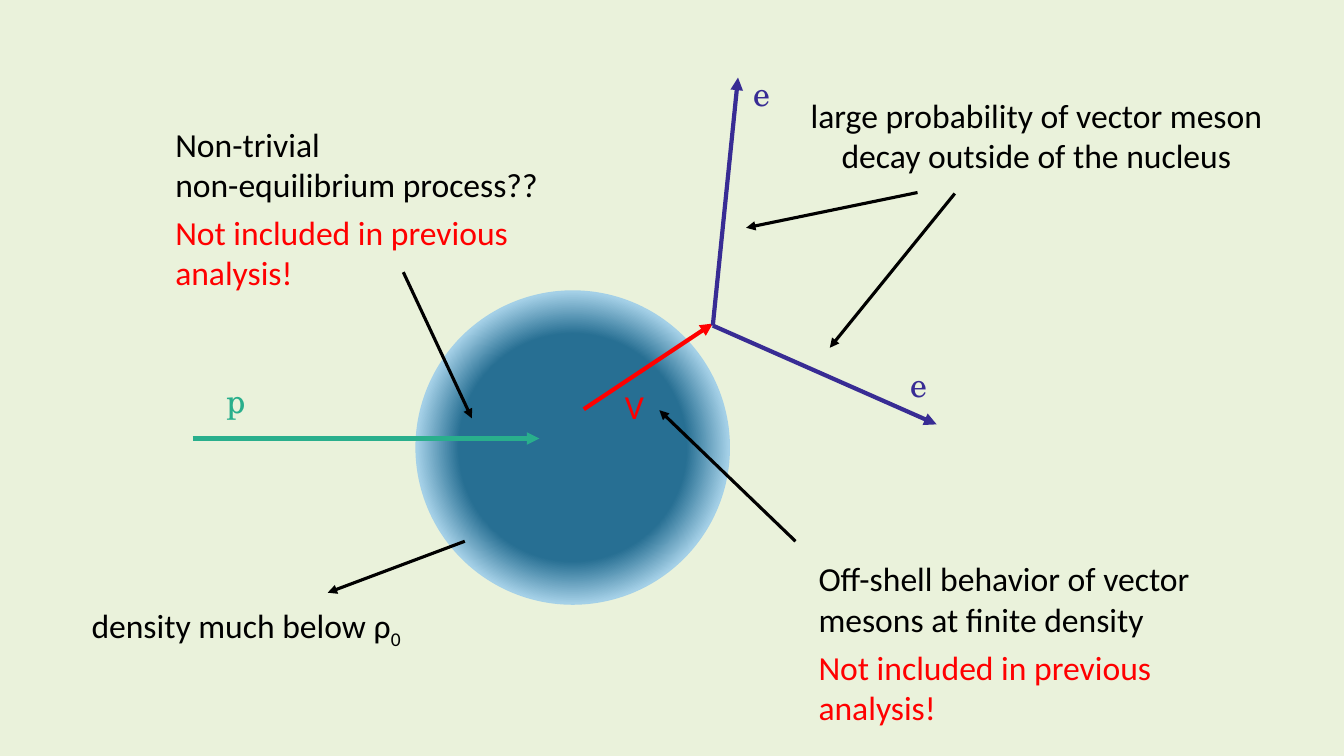
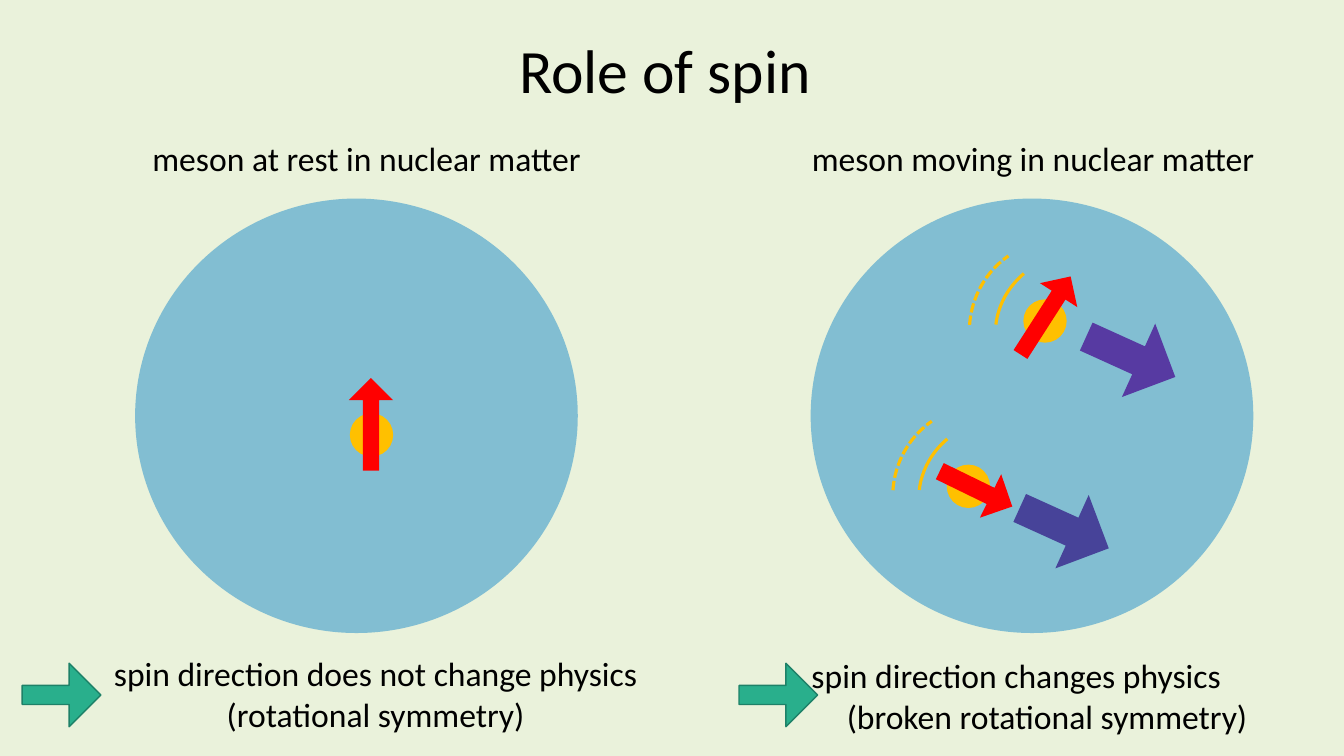
from lxml import etree
from pptx import Presentation
from pptx.dml.color import RGBColor
from pptx.enum.dml import MSO_LINE
from pptx.enum.shapes import MSO_CONNECTOR, MSO_SHAPE
from pptx.enum.text import MSO_ANCHOR, PP_ALIGN
from pptx.oxml.ns import qn
from pptx.util import Pt

PX = 9144
LEFT, MID = PP_ALIGN.LEFT, PP_ALIGN.CENTER
TOP = MSO_ANCHOR.TOP
OVAL, ARC = MSO_SHAPE.OVAL, MSO_SHAPE.ARC
UP, RIGHT = MSO_SHAPE.UP_ARROW, MSO_SHAPE.RIGHT_ARROW
LINE = MSO_CONNECTOR.STRAIGHT
DASH = MSO_LINE.SQUARE_DOT
SANS, SERIF = "Calibri", "TeX Gyre Schola"
WARN = "Not included in previous analysis!"
HUE = {
    "back": "EAF2DB", "ink": "000000", "red": "FF0000", "green": "29AF8C",
    "edge": "1E8168", "blue": "382C94", "core": "276F93", "rim": "A4D0E7",
    "matter": "3D9CCC", "gold": "FFC000", "plum": "573AA2", "slate": "474399",
}


def rgb(name):
    """Return the named colour."""
    return RGBColor.from_string(HUE[name])


def px(*vals):
    """Turn px lengths into EMU."""
    return [round(val * PX) for val in vals]


def write(frame, text, size=24, hue="ink", font=SANS, align=LEFT, sub="", inset=0):
    """Fill a text frame, with an optional subscript and second-line inset."""
    frame.word_wrap = True
    frame.vertical_anchor = TOP
    frame.text = text
    for rank, para in enumerate(frame.paragraphs):
        para.alignment = align
        if rank and inset:
            para._p.get_or_add_pPr().set("marL", str(inset * PX))
    if sub:
        run = para.add_run()
        run.text = sub
        run.font._element.set("baseline", "-25000")
    for para in frame.paragraphs:
        for run in para.runs:
            run.font.size = Pt(size)
            run.font.name = font
            run.font.color.rgb = rgb(hue)


def label(slide, x, y, w, h, text, **form):
    """Add a text box."""
    write(slide.shapes.add_textbox(*px(x, y, w, h)).text_frame, text, **form)


def shape(slide, kind, x, y, w, h, fill=None, line=None, wide=1, turn=0, adj=()):
    """Add a preset shape and return it."""
    item = slide.shapes.add_shape(kind, *px(x, y, w, h))
    item.shadow.inherit = False
    item.rotation = turn
    for rank, val in enumerate(adj):
        item.adjustments[rank] = val
    if fill:
        item.fill.solid()
        item.fill.fore_color.rgb = rgb(fill)
    else:
        item.fill.background()
    if line:
        item.line.color.rgb = rgb(line)
        item.line.width = Pt(wide)
    else:
        item.line.fill.background()
    return item


def arrow(slide, x1, y1, x2, y2, hue="ink", wide=2.25):
    """Add a straight line with a head at its end."""
    item = slide.shapes.add_connector(LINE, *px(x1, y1, x2, y2))
    item.line.color.rgb = rgb(hue)
    item.line.width = Pt(wide)
    props = item._element.spPr
    etree.SubElement(props.find(qn("a:ln")), qn("a:tailEnd"), type="triangle")
    etree.SubElement(props, qn("a:effectLst"))


def glow(item):
    """Fill a shape from core to rim with a round gradient."""
    item.fill.gradient()
    for stop, pos, hue in zip(item.fill.gradient_stops, (0.51, 0.7), ("core", "rim")):
        stop.position = pos
        stop.color.rgb = rgb(hue)
    grad = item._element.spPr.find(qn("a:gradFill"))
    grad.remove(grad.find(qn("a:lin")))
    ring = etree.SubElement(grad, qn("a:path"), {"path": "circle"})
    sides = {side: "50000" for side in "ltrb"}
    etree.SubElement(ring, qn("a:fillToRect"), sides)


def decay(slide, x, y):
    """Draw the nucleus with the proton, meson and electron tracks."""
    glow(shape(slide, OVAL, x + 221, y + 221, 312, 312))
    for x1, y1, x2, y2, hue in (
        (0, 368, 344, 368, "green"),
        (388, 339, 516, 254, "red"),
        (516, 256, 541, 10, "blue"),
        (516, 256, 738, 354, "blue"),
    ):
        arrow(slide, x + x1, y + y1, x + x2, y + y2, hue, 3)
    for dx, dy, text, hue, font in (
        (24, 305, "p", "green", SERIF),
        (702, 289, "e", "blue", SERIF),
        (547, 0, "e", "blue", SERIF),
        (419, 311, "V", "red", SANS),
    ):
        label(slide, x + dx, y + dy, 50, 50, text, hue=hue, font=font)


def note(slide, x, y, w, text, rays, warn=0, **form):
    """Place a remark with its arrows and an optional warning below."""
    label(slide, x, y, w, 91, text, **form)
    if warn:
        label(slide, x, y + warn, 406, 91, WARN, hue="red")
    for x1, y1, x2, y2 in rays:
        arrow(slide, x + x1, y + y1, x + x2, y + y2)


def panel(slide, x, y, shift, head):
    """Draw a disc of nuclear matter under its heading."""
    label(slide, x + shift, y - 65, 591, 50, head, align=MID)
    disc = shape(slide, OVAL, x, y, 439, 431, "matter")
    tint = disc._element.spPr.find(qn("a:solidFill"))[0]
    etree.SubElement(tint, qn("a:alpha"), val="60000")


def ball(slide, x, y):
    """Draw a meson."""
    shape(slide, OVAL, x, y, 43, 43, "gold")


def spin(slide, x, y, w, h, turn=0):
    """Draw the spin arrow."""
    shape(slide, UP, x, y, w, h, "red", turn=turn, adj=(0.37, 0.5))


def mover(slide, x, y, push, hue, aim):
    """Draw a moving meson with wake, momentum and spin."""
    ball(slide, x, y)
    shape(slide, RIGHT, x + push[0], y + push[1], 97, 80, hue, turn=24.4,
          adj=(0.38, 0.5))
    shape(slide, ARC, x - 24, y - 49, 154, 162, line="gold", wide=2.25,
          turn=256.7, adj=(172.96, 198.57))
    wake = shape(slide, ARC, x - 56, y - 56, 182, 177, line="gold", wide=2.25,
                 turn=261.3, adj=(170.02, 201.21))
    wake.line.dash_style = DASH
    dx, dy, w, h, turn = aim
    spin(slide, x + dx, y + dy, w, h, turn)


def result(slide, x, y, dx, dy, text, **form):
    """Place a conclusion next to its arrow."""
    label(slide, x + dx, y + dy, 591, 91, text, **form)
    shape(slide, RIGHT, x, y, 78, 63, "green", "edge", adj=(0.3, 0.5))


def tracks(slide):
    """Build the decay slide."""
    decay(slide, 191, 67)
    note(slide, 164, 118, 406, "Non-trivial\vnon-equilibrium process??",
         [(236, 152, 304, 297)], warn=87)
    note(slide, 81, 595, 360, "density much below ρ",
         [(380, -58, 244, -7)], sub="0")
    note(slide, 780, 89, 496,
         "large probability of vector meson decay outside of the nucleus",
         [(130, 102, -40, 137), (167, 103, 43, 256)], align=MID)
    note(slide, 802, 549, 496,
         "Off-shell behavior of vector mesons at finite density",
         [(-13, -12, -148, -142)], warn=88)


def spins(slide):
    """Build the spin slide."""
    title = slide.shapes.title
    title.left, title.top, title.width, title.height = px(505, 27, 448, 84)
    write(title.text_frame, "Role of spin", size=44)
    panel(slide, 134, 197, -66, "meson at rest in nuclear matter")
    ball(slide, 347, 410)
    spin(slide, 346, 375, 44, 92)
    panel(slide, 804, 197, -75, "meson moving in nuclear matter")
    mover(slide, 1015, 297, (58, 17), "plum", (0, -30, 44, 92, 32.7))
    mover(slide, 939, 461, (68, 23), "slate", (5, -16, 48, 80, 116))
    result(slide, 22, 658, 55, -15,
           "spin direction does not change physics (rotational symmetry)", align=MID)
    result(slide, 733, 658, 62, -13,
           "spin direction changes physics\n(broken rotational symmetry)", inset=35)


def main():
    """Build and save the deck."""
    deck = Presentation()
    deck.slide_width, deck.slide_height = px(1333, 750)
    back = deck.slide_master.background.fill
    back.solid()
    back.fore_color.rgb = rgb("back")
    for build, rank in ((tracks, 6), (spins, 5)):
        build(deck.slides.add_slide(deck.slide_layouts[rank]))
    deck.save("out.pptx")


if __name__ == "__main__":
    main()
